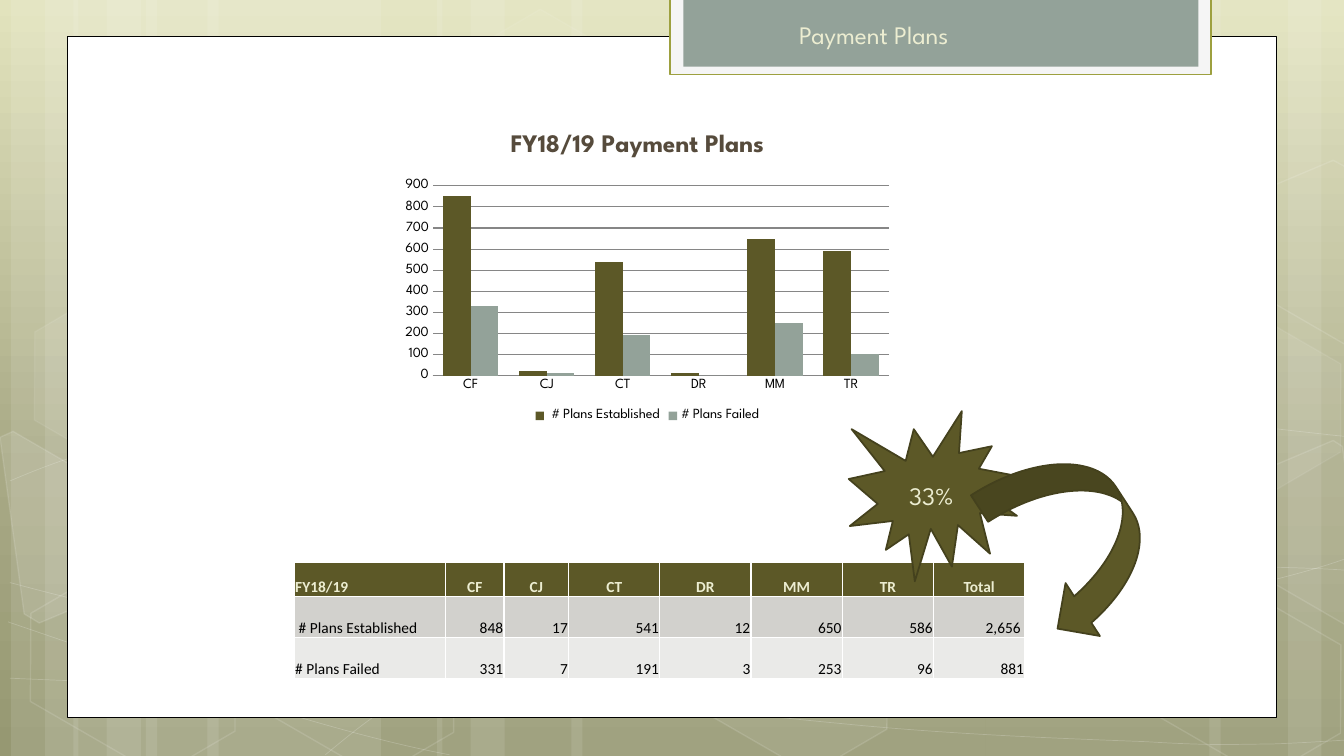
from dataclasses import dataclass

from pptx import Presentation
from pptx import util as u
from pptx.chart import data
from pptx.dml.color import RGBColor
from pptx.enum import chart, shapes, text
from pptx.oxml import parse_xml
from pptx.oxml.ns import nsdecls, qn


@dataclass(frozen=True)
class Theme:
    white: str = "FFFFFF"
    black: str = "000000"
    panel: str = "F5F5F5"
    lime: str = "9DA03F"
    olive: str = "5C5827"
    dark: str = "44411D"
    sage: str = "93A299"
    cream: str = "ECEDD1"
    brown: str = "564B3C"
    grid: str = "868686"
    bands: tuple = ("5C5827", "D2D1CD", "EAEAE8")
    backdrop: tuple = ((0, "E2E3BD"), (62, "A8A985"), (100, "969872"))
    face: str = "League Spartan"
    table_face: str = "Calibri"
    big: int = 18
    cell: int = 11
    label: int = 10


T = Theme()
COURTS = ["CF", "CJ", "CT", "DR", "MM", "TR"]
PLANS = {
    " # Plans Established": ["848", "17", "541", "12", "650", "586", "2,656"],
    "# Plans Failed": ["331", "7", "191", "3", "253", "96", "881"],
}

# Backdrop: left edge and width of each pale stripe
STRIPES = [
    (3.68, 5.92), (0.28, 1.7), (1.14, 2.82), (5.23, 5.92), (1.85, 1.7), (2.69, 2.82),
    (24.84, 5.92), (32.46, 1.7), (30.48, 2.82), (14.4, 10.44), (11.02, 1.7), (11.86, 2.82),
]
# Start point, then two handles and an end point for each bend
CURVES = [
    [(0.25, 17.09), (2.08, 17.17), (3.91, 17.25), (6.45, 17.22), (8.99, 17.2), (12.12, 17.15),
     (15.49, 16.89), (18.9, 16.64), (23.7, 16.15), (26.8, 15.67), (29.92, 15.19), (33.1, 14.43),
     (34.11, 14)],
    [(0.25, 12.12), (1.22, 11.71), (2.18, 11.33), (4.11, 10.95), (6.05, 10.57), (8.76, 10.01),
     (11.76, 9.83), (14.78, 9.65), (18.41, 9.63), (22.15, 9.83), (25.88, 10.03), (32.08, 10.82),
     (34.11, 11.02)],
    [(0.2, 15.67), (4.29, 17.07), (8.38, 18.47), (11.33, 19.02)],
    [(0.25, 14.68), (1.3, 14.96), (2.36, 15.24), (4.34, 15.65), (6.3, 16.03), (9.25, 16.66),
     (12.07, 17.09), (14.88, 17.53), (18.47, 17.98), (21.26, 18.24), (24.08, 18.52),
     (27.08, 18.62), (28.88, 18.69), (30.66, 18.8), (31.12, 18.75), (32, 18.75), (32.87, 18.72),
     (33.5, 18.67), (34.11, 18.64)],
    [(8.2, 19.02), (8.81, 18.52), (9.4, 18.01), (10.24, 17.55), (11.05, 17.09), (12.19, 16.59),
     (13.13, 16.23), (14.07, 15.88), (14.66, 15.72), (15.9, 15.47), (17.15, 15.21),
     (19.43, 14.86), (20.6, 14.68), (21.79, 14.5), (21.97, 14.5), (23.04, 14.45),
     (24.08, 14.38), (25.73, 14.3), (26.9, 14.27), (28.7, 14.25), (32.5, 14.25), (34.06, 14.38)],
]
# Left, top, fill opacity, line opacity
HEXAGONS = [
    (11.3, 0.91, 4, 8), (16.81, 14.96, 6, 12), (0.38, 15.01, 0, 12), (0.48, 7.92, 7, 8),
    (5.89, 15.04, 0, 12), (28.24, 15.06, 0, 12), (28.24, 7.98, 7, 8),
]
# Fill opacity and corners of the hexagons cut by the slide edge
CUT_HEXAGONS = [
    (10, [(0, 11.02), (0.33, 10.87), (2.92, 12.37), (3.23, 14.76), (0.99, 15.7), (0.61, 15.47)]),
    (4, [(31.37, 12.04), (33.6, 11.1), (33.83, 11.25), (34.47, 15.88), (34.26, 15.95),
         (31.67, 14.45)]),
    (0, [(31.37, 4.98), (33.6, 4.04), (33.88, 4.19), (34.47, 8.79), (34.26, 8.89),
         (31.67, 7.39)]),
]


def apply(obj, **fmt):
    for name, value in fmt.items():
        setattr(obj, name, value)


def rgb(value):
    return RGBColor.from_string(value)


def set_font(font, color, size, face=T.face, bold=False):
    apply(font, name=face, size=u.Pt(size), bold=bold)
    font.color.rgb = rgb(color)


def fade(sp, query, opacity):
    for color in sp.element.spPr.xpath(query):
        color.append(parse_xml(f'<a:alpha {nsdecls("a")} val="{opacity * 1000}"/>'))


def paint(sp, fill=None, line=None, width=1.25, fill_opacity=100, line_opacity=100):
    sp.shadow.inherit = False
    if fill and fill_opacity:
        sp.fill.solid()
        sp.fill.fore_color.rgb = rgb(fill)
        if fill_opacity < 100:
            fade(sp, "a:solidFill/a:srgbClr", fill_opacity)
    else:
        sp.fill.background()
    if line:
        sp.line.color.rgb = rgb(line)
        sp.line.width = u.Pt(width)
        if line_opacity < 100:
            fade(sp, "a:ln/a:solidFill/a:srgbClr", line_opacity)
    else:
        sp.line.fill.background()


def add_preset(s, kind, box, rotation=0, **style):
    sp = s.shapes.add_shape(kind, *map(u.Cm, box))
    sp.rotation = rotation
    paint(sp, **style)
    return sp


def add_outline(s, points, closed, **style):
    start, *rest = [(u.Cm(x), u.Cm(y)) for x, y in points]
    builder = s.shapes.build_freeform(*start)
    builder.add_line_segments(rest, close=closed)
    sp = builder.convert_to_shape()
    paint(sp, **style)
    return sp


def bend(sp):
    """Turn each three straight steps into one Bezier bend."""
    steps = sp.element.spPr.xpath(".//a:lnTo")
    for i in range(0, len(steps), 3):
        curve = parse_xml(f'<a:cubicBezTo {nsdecls("a")}/>')
        steps[i].addprevious(curve)
        for step in steps[i:i + 3]:
            curve.append(step[0])
            step.getparent().remove(step)


def add_backdrop(s):
    fill = s.background.fill
    fill.gradient()
    fill.gradient_angle = 270
    stops = next(s.element.iter(qn("a:gsLst")))
    for stop in list(stops):
        stops.remove(stop)
    for pos, color in T.backdrop:
        stops.append(parse_xml(f'<a:gs {nsdecls("a")} pos="{pos * 1000}">'
                               f'<a:srgbClr val="{color}"/></a:gs>'))
    group = s.shapes.add_group_shape()
    for left, width in STRIPES:
        add_preset(group, shapes.MSO_SHAPE.RECTANGLE, (left, 0, width, 19.05),
                   fill=T.white, fill_opacity=10)
    for knots in CURVES:
        bend(add_outline(group, knots, False, line=T.white, width=0.5, line_opacity=20))
    for left, top, opacity, edge in HEXAGONS:
        sp = add_preset(group, shapes.MSO_SHAPE.HEXAGON, (left, top, 5.94, 3.86), 30, fill=T.white,
                        line=T.white, width=1, fill_opacity=opacity, line_opacity=edge)
        sp.adjustments[0], sp.adjustments[1] = 0.285, 1.155
    for opacity, corners in CUT_HEXAGONS:
        add_outline(group, corners, True, fill=T.white, line=T.white, width=1,
                    fill_opacity=opacity, line_opacity=12)


def add_label(s, words, box, **frame):
    tf = s.shapes.add_textbox(*map(u.Cm, box)).text_frame
    apply(tf, word_wrap=True, **frame)
    r = tf.paragraphs[0].add_run()
    r.text = words
    set_font(r.font, T.cream, T.big)


def add_plans_chart(s, box):
    cd = data.CategoryChartData(number_format="0")
    cd.categories = COURTS
    cd.add_series(" # Plans Established", [850, 20, 540, 10, 650, 590])
    cd.add_series("# Plans Failed", [330, 10, 190, 0, 250, 100])
    ch = s.shapes.add_chart(chart.XL_CHART_TYPE.COLUMN_CLUSTERED, *map(u.Cm, box), cd).chart
    set_font(ch.font, T.black, T.label)
    apply(ch, has_title=True, has_legend=True)
    title = ch.chart_title
    r = title.text_frame.paragraphs[0].add_run()
    r.text = "FY18/19 Payment Plans"
    set_font(r.font, T.brown, T.big, bold=True)
    for layout in title._element.findall(qn("c:layout")):
        title._element.remove(layout)
    title._element.find(qn("c:tx")).addnext(parse_xml(
        f'<c:layout {nsdecls("c")}><c:manualLayout><c:xMode val="edge"/><c:yMode val="edge"/>'
        '<c:x val="0.22"/><c:y val="0.01"/></c:manualLayout></c:layout>'))
    apply(ch.legend, position=chart.XL_LEGEND_POSITION.BOTTOM, include_in_layout=False)
    plot = ch.plots[0]
    apply(plot, gap_width=75, overlap=0, vary_by_categories=False)
    for series, color in zip(plot.series, (T.olive, T.sage)):
        series.format.fill.solid()
        series.format.fill.fore_color.rgb = rgb(color)
    for axis in (ch.category_axis, ch.value_axis):
        axis.major_tick_mark = chart.XL_TICK_MARK.NONE
    apply(ch.value_axis, minimum_scale=0, maximum_scale=900, major_unit=100)
    ch.value_axis.format.line.fill.background()
    for part in (ch.category_axis, ch.value_axis.major_gridlines):
        part.format.line.color.rgb = rgb(T.grid)


def add_borders(cell):
    tc_pr = cell._tc.get_or_add_tcPr()
    for i, side in enumerate(("lnL", "lnR", "lnT", "lnB")):
        tc_pr.insert(i, parse_xml(f'<a:{side} {nsdecls("a")} w="12700"><a:solidFill>'
                                  f'<a:srgbClr val="{T.white}"/></a:solidFill></a:{side}>'))


def add_plans_table(s, left, top):
    rows = [["FY18/19", *COURTS, "Total"], *([name, *counts] for name, counts in PLANS.items())]
    widths, heights = [3.81, 1.47, 1.63] + [2.3] * 5, [0.85, 1.03, 1.03]
    size = map(u.Cm, (left, top, sum(widths), sum(heights)))
    table = s.shapes.add_table(len(rows), len(widths), *size).table
    for column, width in zip(table.columns, widths):
        column.width = u.Cm(width)
    for i, (row, height) in enumerate(zip(rows, heights)):
        table.rows[i].height = u.Cm(height)
        for j, words in enumerate(row):
            cell = table.cell(i, j)
            apply(cell, margin_left=u.Cm(0.02), margin_top=u.Cm(0.02), margin_bottom=0,
                  margin_right=u.Cm(0.1 if (i, j) == (1, 7) else 0.02),
                  vertical_anchor=text.MSO_ANCHOR.BOTTOM)
            cell.fill.solid()
            cell.fill.fore_color.rgb = rgb(T.bands[i])
            add_borders(cell)
            p = cell.text_frame.paragraphs[0]
            if j:
                p.alignment = text.PP_ALIGN.RIGHT if i else text.PP_ALIGN.CENTER
            r = p.add_run()
            r.text = words
            set_font(r.font, T.black if i else T.cream, T.cell, T.table_face, bold=i == 0)


def main():
    prs = Presentation()
    apply(prs, slide_width=u.Cm(33.87), slide_height=u.Cm(19.05))
    s = prs.slides.add_slide(prs.slide_layouts[6])
    preset = shapes.MSO_SHAPE
    add_backdrop(s)
    # White page and title tab
    add_preset(s, preset.RECTANGLE, (1.7, 0.92, 30.46, 17.17),
               fill=T.white, line=T.black, width=0.5)
    add_preset(s, preset.RECTANGLE, (16.89, -0.05, 13.63, 1.93), fill=T.panel, line=T.lime)
    add_preset(s, preset.RECTANGLE, (17.22, -0.05, 12.98, 1.73), fill=T.sage)
    add_label(s, "Payment Plans", (17.35, 0.2, 9.32, 1.17), margin_left=u.Cm(2.79),
              vertical_anchor=text.MSO_ANCHOR.BOTTOM)
    # Figures
    add_plans_chart(s, (9.96, 3.12, 12.7, 7.62))
    add_plans_table(s, 7.42, 14.18)
    # Failure rate callout
    add_preset(s, preset.EXPLOSION1, (21.39, 10.36, 4.24, 4.29), fill=T.olive, line=T.dark)
    add_label(s, "33%", (22.66, 11.99, 2.11, 1.02))
    add_preset(s, preset.CURVED_DOWN_ARROW, (24.71, 12.04, 4.8, 3.18), 57,
               fill=T.olive, line=T.dark)
    prs.save("out.pptx")


if __name__ == "__main__":
    main()
